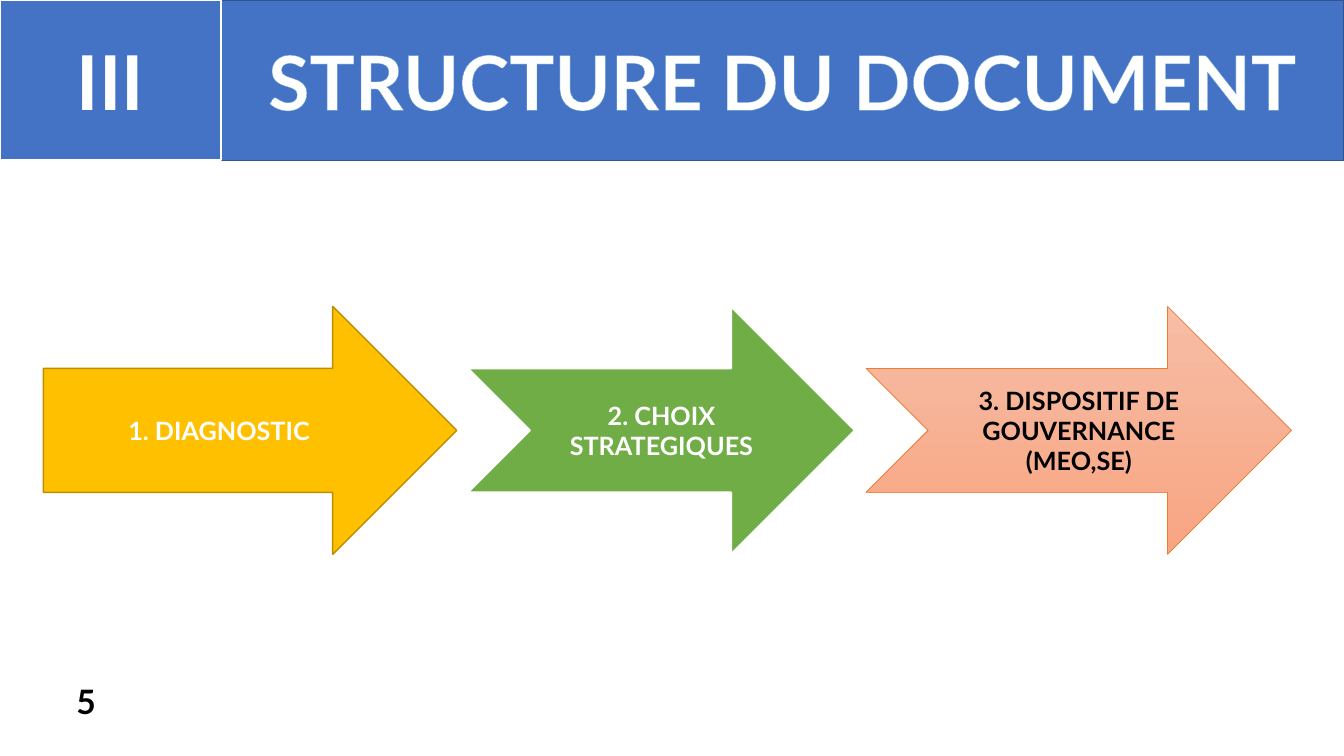
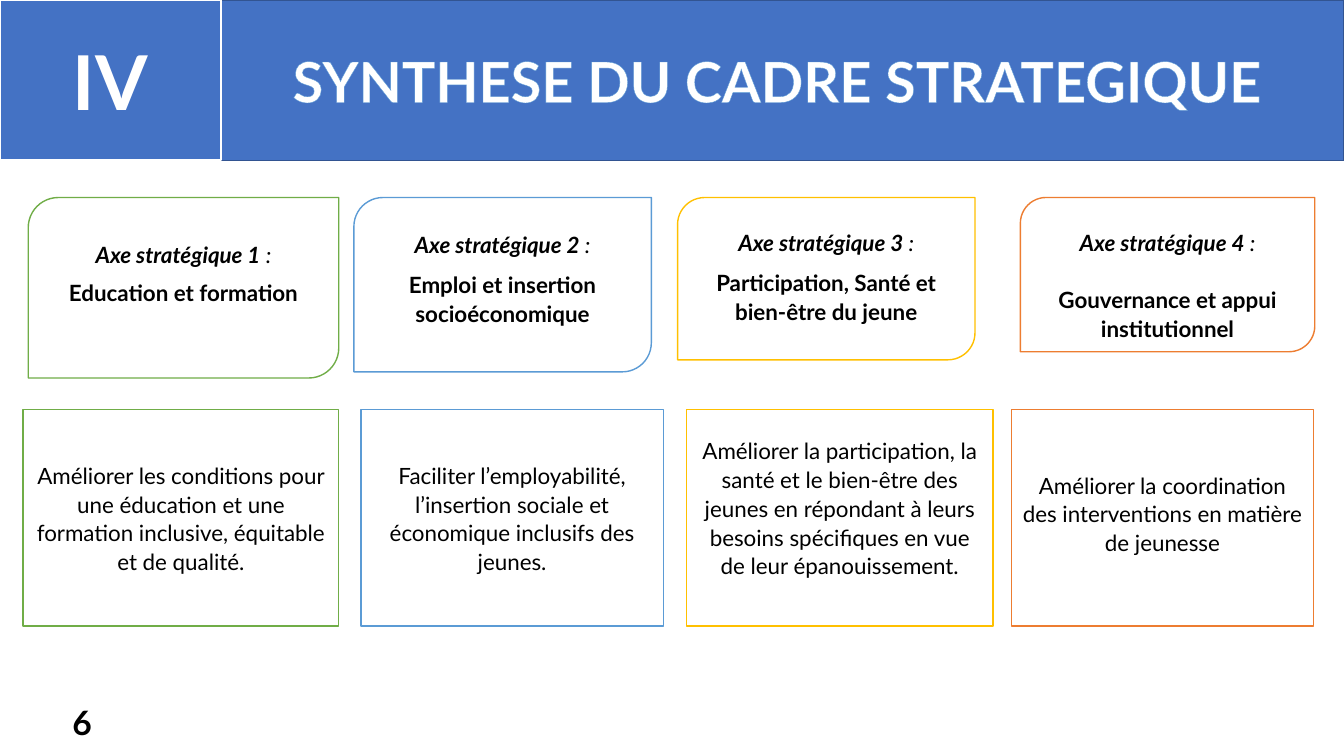
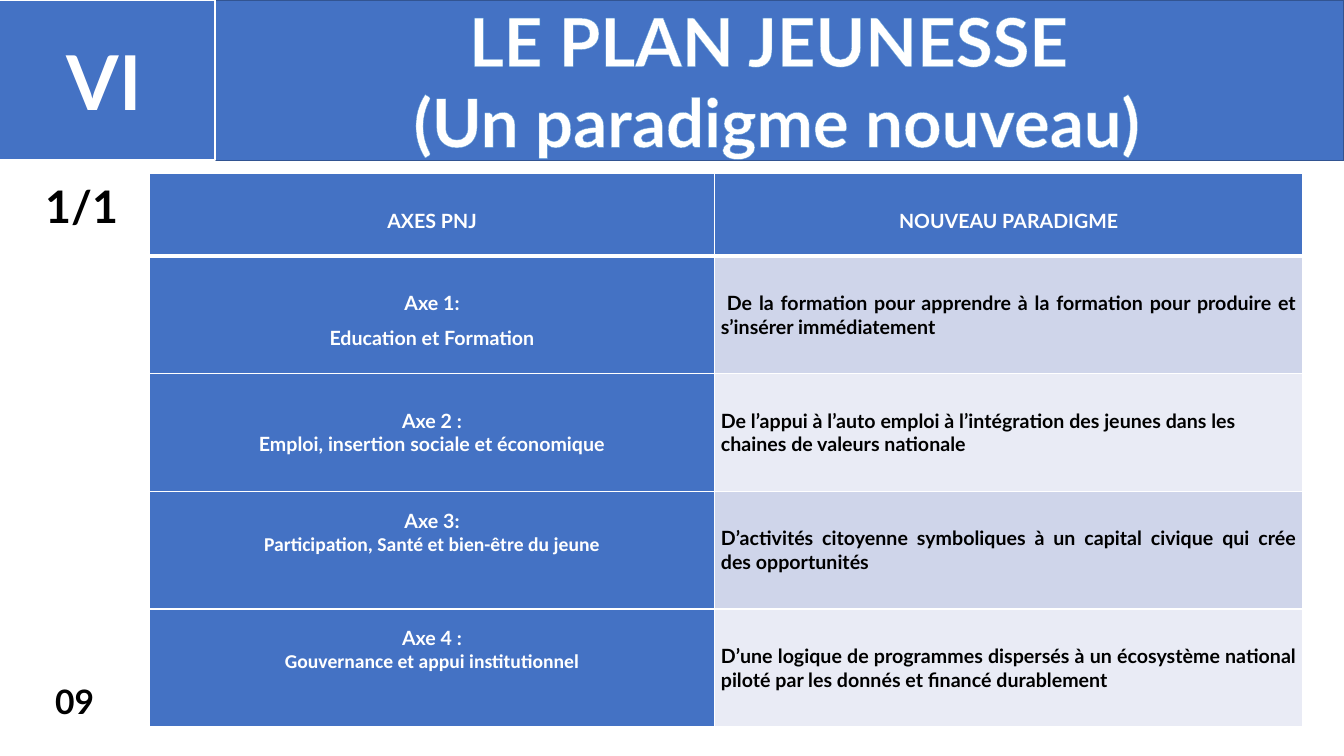
from dataclasses import dataclass

from lxml import etree
from pptx import Presentation
from pptx.dml.color import RGBColor
from pptx.enum import shapes, text
from pptx.oxml import ns
from pptx.util import Inches, Pt

KIND = shapes.MSO_SHAPE
ALIGN = text.PP_ALIGN
ANCHOR = text.MSO_ANCHOR


@dataclass(frozen=True)
class Theme:
    font: str = "Lato"
    alt: str = "Calibri"
    white: str = "FFFFFF"
    black: str = "000000"
    blue: str = "4472C4"
    navy: str = "325491"
    sky: str = "5B9BD5"
    green: str = "70AD47"
    gold: str = "FFC000"
    ochre: str = "BD8E00"
    orange: str = "ED7D31"
    peach: tuple = ("F7BDA5", "F8A582")
    bands: tuple = ("CFD5EA", "E9EBF5")
    numeral: int = 54
    mark: int = 32
    page: int = 24
    step: int = 18
    body: int = 16
    cell: int = 14


T = Theme()
BAND = 1.59


def rgb(code):
    return RGBColor.from_string(code)


def sub(parent, tag, **attrs):
    return etree.SubElement(parent, ns.qn(tag), attrs)


def style(par, size, color, bold=True, align=ALIGN.CENTER, lead=None, font=T.font):
    par.alignment = align
    if lead:
        par.line_spacing = lead
    for run in par.runs:
        run.font.name, run.font.size, run.font.bold = font, Pt(size), bold
        run.font.color.rgb = rgb(color)


def write(frame, words, size, color, **how):
    frame.word_wrap = True
    frame.text = words
    for par in frame.paragraphs:
        style(par, size, color, **how)


def shape(slide, kind, box, fill, line, width=1):
    item = slide.shapes.add_shape(kind, *map(Inches, box))
    item.shadow.inherit = False
    if isinstance(fill, tuple):
        item.fill.gradient()
        item.fill.gradient_angle = 270
        for stop, code in zip(item.fill.gradient_stops, fill):
            stop.color.rgb = rgb(code)
    else:
        item.fill.solid()
        item.fill.fore_color.rgb = rgb(fill)
    item.line.color.rgb = rgb(line)
    item.line.width = Pt(width)
    item.text_frame.vertical_anchor = ANCHOR.MIDDLE
    return item


def outline(run):
    """Give the letters a thin sky-blue edge."""
    edge = etree.Element(ns.qn("a:ln"), w=str(Pt(0.8)))
    sub(sub(edge, "a:solidFill"), "a:srgbClr", val=T.sky)
    run.font._element.insert(0, edge)


def header(slide, numeral, title, size, left=2.08, start=0):
    bar = shape(slide, KIND.RECTANGLE, (left, 0, 13.33 - left, BAND), T.blue, T.navy)
    write(bar.text_frame, title, size, T.white)
    for par in bar.text_frame.paragraphs:
        for run in par.runs:
            outline(run)
    tab = shape(slide, KIND.RECTANGLE, (start, 0, 2.19, BAND), T.blue, T.white, 1.5)
    write(tab.text_frame, numeral, T.numeral, T.white)


def label(slide, box, words, size, lead=None):
    frame = slide.shapes.add_textbox(*map(Inches, box)).text_frame
    write(frame, words, size, T.black, lead=lead)
    frame.auto_size = text.MSO_AUTO_SIZE.SHAPE_TO_FIT_TEXT


def page(slide, number, left, top=6.51, width=0.55):
    label(slide, (left, top, width, 0.62), number, T.page, 1.5)


def arrows(slide, left, top, height, gap, steps):
    for kind, width, fill, line, weight, color, words in steps:
        arrow = shape(slide, kind, (left, top, width, height), fill, line, weight)
        write(arrow.text_frame, words, T.step, color)
        left += width + gap


def card(slide, box, color, name, topic, inset, gap):
    """Rounded heading; inset is above the name, gap is below it."""
    frame = shape(slide, KIND.ROUND_2_DIAG_RECTANGLE, box, T.white, color).text_frame
    frame.vertical_anchor = ANCHOR.TOP
    frame.margin_top = Inches(inset)
    write(frame, f"{name}\n{topic}", T.body, T.black, lead=1.07)
    first = frame.paragraphs[0]
    first.add_run().text = "\u00a0:"
    style(first, T.body, T.black, lead=1.07)
    first.space_after = Pt(gap)
    first.runs[1].font.bold = False
    for run in first.runs:
        run.font.italic = True


def goal(slide, box, color, words, foot):
    frame = shape(slide, KIND.RECTANGLE, box, T.white, color).text_frame
    frame.margin_bottom = Inches(foot)
    write(frame, words, T.body, T.black, bold=False, lead=1.07)


def borders(cell, foot):
    props = cell._tc.get_or_add_tcPr()
    for side, width in zip("LRTB", (1, 1, 1, foot)):
        edge = sub(props, f"a:ln{side}", w=str(Pt(width)))
        sub(sub(edge, "a:solidFill"), "a:srgbClr", val=T.white)


def fill(cell, words, back, color, foot=1, **how):
    cell.margin_left = cell.margin_right = Inches(0.06)
    cell.margin_top = cell.margin_bottom = 0
    cell.vertical_anchor = ANCHOR.MIDDLE
    borders(cell, foot)
    cell.fill.solid()
    cell.fill.fore_color.rgb = rgb(back)
    write(cell.text_frame, words, T.cell, color, **how)


def grid(slide, box, heads, rows):
    left, top, width, height = box
    table = slide.shapes.add_table(len(rows) + 1, 2, *map(Inches, box)).table
    table.horz_banding = False
    table.columns[0].width = Inches(5.61)
    table.columns[1].width = Inches(width - 5.61)
    table.rows[0].height = Inches(0.82)
    for col, head in enumerate(heads):
        fill(table.cell(0, col), head, T.blue, T.white, foot=3, lead=1.5)
    for row, (axis, topic, shift, lead, font, align, words) in enumerate(rows, 1):
        table.rows[row].height = Inches((height - 0.82) / len(rows))
        cell = table.cell(row, 0)
        fill(cell, f"{axis}\n{topic}", T.blue, T.white, lead=lead)
        cell.margin_bottom = Inches(shift)
        style(cell.text_frame.paragraphs[1], T.cell, T.white, lead=lead, font=font)
        fill(table.cell(row, 1), words, T.bands[(row - 1) % 2], T.black, align=align)
    indent = table.cell(1, 1).text_frame.paragraphs[0]
    indent._p.get_or_add_pPr().set("indent", str(Inches(0.06)))


def structure(slide):
    header(slide, "III", "STRUCTURE DU DOCUMENT", 54, left=2.19)
    notch = KIND.NOTCHED_RIGHT_ARROW
    arrows(slide, 0.43, 3.04, 2.46, 0.11, [
        (KIND.RIGHT_ARROW, 4.1, T.gold, T.ochre, 1, T.white, "1. DIAGNOSTIC"),
        (notch, 3.84, T.green, T.white, 1.5, T.white, "2. CHOIX STRATEGIQUES"),
        (notch, 4.22, T.peach, T.orange, 0.5, T.black,
         "3. DISPOSITIF DE GOUVERNANCE (MEO,SE)"),
    ])
    page(slide, "5", 0.58)


def summary(slide):
    header(slide, "IV", "SYNTHESE DU CADRE STRATEGIQUE", 40)
    axes = [
        (T.green, (0.28, 3.08, 1.79), 0.33, 6.5, "Education et formation",
         (0.23, 3.13), 0.05,
         "Améliorer les conditions pour une éducation et une formation inclusive, "
         "équitable et de qualité."),
        (T.sky, (3.51, 2.95, 1.73), 0.23, 8, "Emploi et insertion socioéconomique",
         (3.58, 3), 0.05,
         "Faciliter l’employabilité, l’insertion sociale et économique inclusifs "
         "des jeunes."),
        (T.gold, (6.72, 2.95, 1.61), 0.22, 8,
         "Participation, Santé et bien-être du jeune", (6.81, 3.04), 0.25,
         "Améliorer la participation, la santé et le bien-être des jeunes en "
         "répondant à leurs besoins spécifiques en vue de leur épanouissement."),
        (T.orange, (10.12, 2.92, 1.53), 0.22, 20.5,
         "Gouvernance et appui institutionnel", (10.03, 3), 0.14,
         "Améliorer la coordination des interventions en matière de jeunesse"),
    ]
    for rank, (color, top, inset, gap, topic, low, foot, words) in enumerate(axes, 1):
        left, width, height = top
        card(slide, (left, 1.96, width, height), color,
             f"Axe stratégique {rank}", topic, inset, gap)
        goal(slide, (low[0], 4.06, low[1], 2.15), color, words, foot)
    page(slide, "6", 0.54, top=6.71)


def plan(slide):
    header(slide, "VI", "LE PLAN JEUNESSE \n(Un paradigme nouveau)", 48, start=-0.06)
    full = ALIGN.JUSTIFY
    grid(slide, (1.48, 1.72, 11.44, 5.49), ("AXES PNJ", "NOUVEAU PARADIGME"), [
        ("Axe 1:", "Education et Formation", 0, 1.5, T.font, full,
         "De la formation pour apprendre à la formation pour produire et "
         "s’insérer immédiatement"),
        ("Axe 2 :", "Emploi, insertion sociale et économique", 0, None, T.font,
         ALIGN.LEFT,
         "De l’appui à l’auto emploi à l’intégration des jeunes dans les chaines "
         "de valeurs nationale"),
        ("Axe 3:", "Participation, Santé et bien-être du jeune", 0.35, None, T.alt,
         full,
         "D’activités citoyenne symboliques à un capital civique qui crée des "
         "opportunités"),
        ("Axe 4 :", "Gouvernance et appui institutionnel", 0.35, None, T.alt, full,
         "D’une logique de programmes dispersés à un écosystème national piloté "
         "par les donnés et financé durablement"),
    ])
    page(slide, "09", 0.35, width=0.78)
    label(slide, (0.25, 1.72, 1.12, 0.64), "1/1", T.mark)


def main():
    deck = Presentation()
    deck.slide_width, deck.slide_height = Inches(13.33), Inches(7.5)
    for build in (structure, summary, plan):
        build(deck.slides.add_slide(deck.slide_layouts[6]))
    deck.save("out.pptx")


if __name__ == "__main__":
    main()
